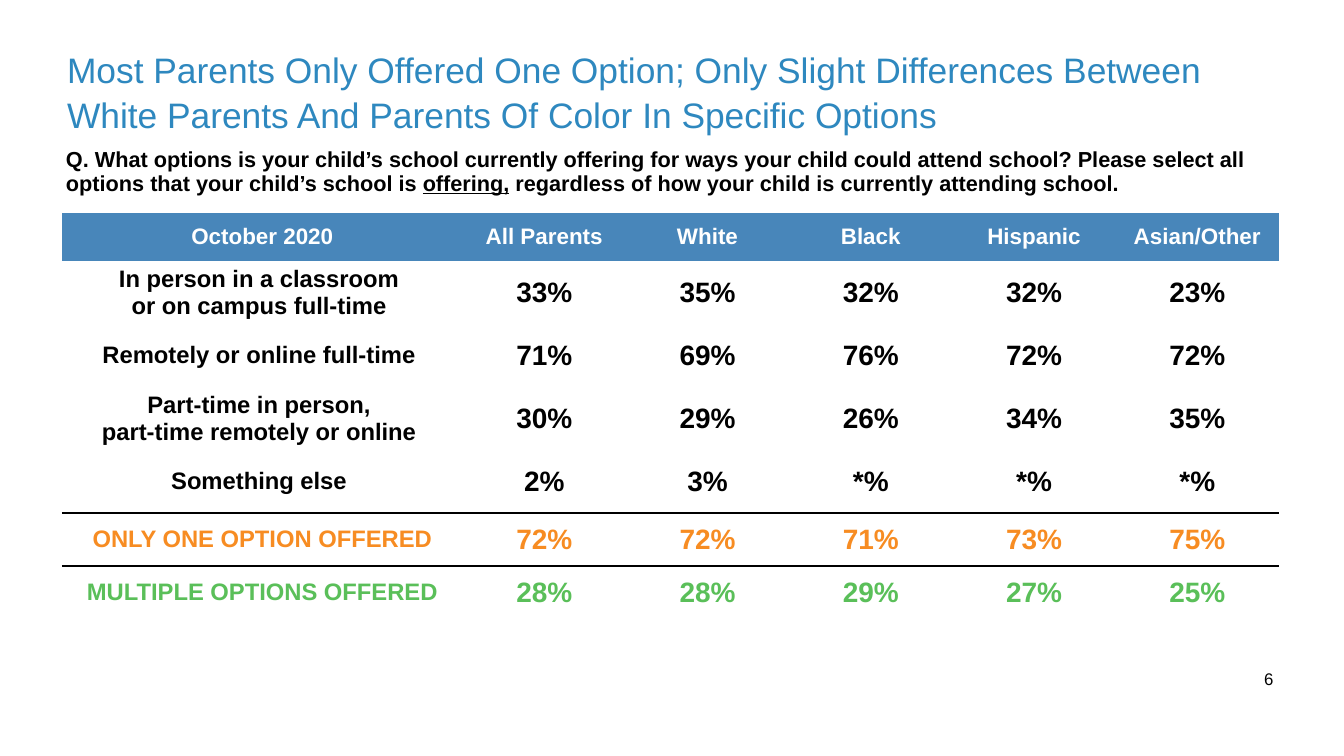
from dataclasses import dataclass

from lxml import etree
from pptx import Presentation
from pptx import util as u
from pptx.dml.color import RGBColor
from pptx.enum import text
from pptx.oxml import ns

PX = u.Inches(1) // 100
NO_STYLE = "{2D5ABB26-0587-4C30-8999-92F81FD0307C}"


@dataclass(frozen=True)
class Theme:
    """Colours, font and type sizes of the slide."""
    font: str = "Arial"
    title: str = "2E88BF"
    header: str = "4886BA"
    white: str = "FFFFFF"
    ink: str = "000000"
    single: str = "F78C22"
    multiple: str = "5ABF59"
    title_pt: float = 50.5
    question_pt: int = 31
    header_pt: int = 32
    label_pt: int = 34
    value_pt: int = 40
    number_pt: int = 24
    rule_pt: int = 3


T = Theme()

HEADER = ["October 2020", "All Parents", "White", "Black", "Hispanic", "Asian/Other"]
ROWS = [
    (["In person in a classroom \vor on campus full-time ", "33%", "35%", "32%", "32%", "23%"], T.ink),
    (["Remotely or online full-time ", "71%", "69%", "76%", "72%", "72%"], T.ink),
    (["Part-time in person, \vpart-time remotely or online ", "30%", "29%", "26%", "34%", "35%"], T.ink),
    (["Something else ", "2%", "3%", "*%", "*%", "*%"], T.ink),
    (["ONLY ONE OPTION OFFERED", "72%", "72%", "71%", "73%", "75%"], T.single),
    (["MULTIPLE OPTIONS OFFERED", "28%", "28%", "29%", "27%", "25%"], T.multiple),
]
COL_WIDTHS = [795] + [324] * 5
ROW_HEIGHTS = [96] + [125] * 4 + [105] * 2
RULED_EDGES = {4: ["lnB"], 5: ["lnT", "lnB"], 6: ["lnT"]}


def emu(*lengths):
    """Turn px lengths into EMU."""
    return [u.Emu(n * PX) for n in lengths]


def add_run(p, words, size, color, bold=False, underline=None):
    """Add one formatted run to a paragraph."""
    r = p.add_run()
    r.text = words
    r.font.name = T.font
    r.font.size = u.Pt(size)
    r.font.bold = bold
    r.font.underline = underline
    r.font.color.rgb = RGBColor.from_string(color)


def set_frame(tf, wrap=True):
    """Give a text frame its margins, top anchor and wrapping."""
    tf.margin_left = tf.margin_top = tf.margin_right = tf.margin_bottom = emu(8)[0]
    tf.vertical_anchor = text.MSO_ANCHOR.TOP
    tf.auto_size = text.MSO_AUTO_SIZE.NONE
    tf.word_wrap = wrap


def add_title(slide, box):
    """Place the title placeholder."""
    sp = slide.shapes.title
    sp.left, sp.top, sp.width, sp.height = emu(*box)
    set_frame(sp.text_frame)
    p = sp.text_frame.paragraphs[0]
    p.alignment = text.PP_ALIGN.LEFT
    p.line_spacing = 1.05
    add_run(p, "Most Parents Only Offered One Option; Only Slight Differences Between "
               "White Parents And Parents Of Color In Specific Options", T.title_pt, T.title)


def add_question(slide, box):
    """Place the survey question with its underlined word."""
    tf = slide.shapes.add_textbox(*emu(*box)).text_frame
    set_frame(tf)
    p = tf.paragraphs[0]
    p.line_spacing = 0.9
    for words, underline in (
        ("Q. What options is your child’s school currently offering for ways your child could "
         "attend school? Please select all options that your child’s school is ", False),
        ("offering,", True),
        (" regardless of how your child is currently attending school.", False),
    ):
        add_run(p, words, T.question_pt, T.ink, True, underline)


def add_rule(cell, edges):
    """Draw rules on the given edges of a cell."""
    tc_pr = cell._tc.get_or_add_tcPr()
    for i, edge in enumerate(edges):
        ln = etree.Element(ns.qn(f"a:{edge}"), w=str(u.Pt(T.rule_pt)))
        fill = etree.SubElement(ln, ns.qn("a:solidFill"))
        etree.SubElement(fill, ns.qn("a:srgbClr"), val=T.ink)
        tc_pr.insert(i, ln)


def fill_cell(cell, words, size, color, fill=None):
    """Write centred bold text in a cell and set its fill."""
    cell.vertical_anchor = text.MSO_ANCHOR.MIDDLE
    cell.margin_left = cell.margin_top = cell.margin_right = cell.margin_bottom = emu(6)[0]
    if fill:
        cell.fill.solid()
        cell.fill.fore_color.rgb = RGBColor.from_string(fill)
    else:
        cell.fill.background()
    p = cell.text_frame.paragraphs[0]
    p.alignment = text.PP_ALIGN.CENTER
    for i, line in enumerate(words.split("\v")):
        if i:
            p.add_line_break()
        add_run(p, line, size, color, True)


def add_options_table(slide, left, top):
    """Place the table of school options by parent group."""
    box = emu(left, top, sum(COL_WIDTHS), sum(ROW_HEIGHTS))
    table = slide.shapes.add_table(len(ROW_HEIGHTS), len(COL_WIDTHS), *box).table
    table.first_row = table.horz_banding = False
    table._tbl.tblPr.find(ns.qn("a:tableStyleId")).text = NO_STYLE
    for col, width in zip(table.columns, emu(*COL_WIDTHS)):
        col.width = width
    for row, height in zip(table.rows, emu(*ROW_HEIGHTS)):
        row.height = height
    for c, words in enumerate(HEADER):
        fill_cell(table.cell(0, c), words, T.header_pt, T.white, T.header)
    for r, (values, color) in enumerate(ROWS, 1):
        for c, words in enumerate(values):
            cell = table.cell(r, c)
            fill_cell(cell, words, T.value_pt if c else T.label_pt, color)
            add_rule(cell, RULED_EDGES.get(r, []))


def add_page_number(slide, box):
    """Place the page number."""
    tf = slide.shapes.add_textbox(*emu(*box)).text_frame
    set_frame(tf, wrap=False)
    p = tf.paragraphs[0]
    p.alignment = text.PP_ALIGN.CENTER
    add_run(p, "6", T.number_pt, T.ink)


def main():
    """Build and save the slide."""
    prs = Presentation()
    prs.slide_width, prs.slide_height = emu(2667, 1500)
    slide = prs.slides.add_slide(prs.slide_layouts[5])
    add_title(slide, (125, 84, 2417, 208))
    add_page_number(slide, (2500, 1319, 36, 56))
    add_options_table(slide, 123, 422)
    add_question(slide, (123, 288, 2417, 118))
    prs.save("out.pptx")


if __name__ == "__main__":
    main()
